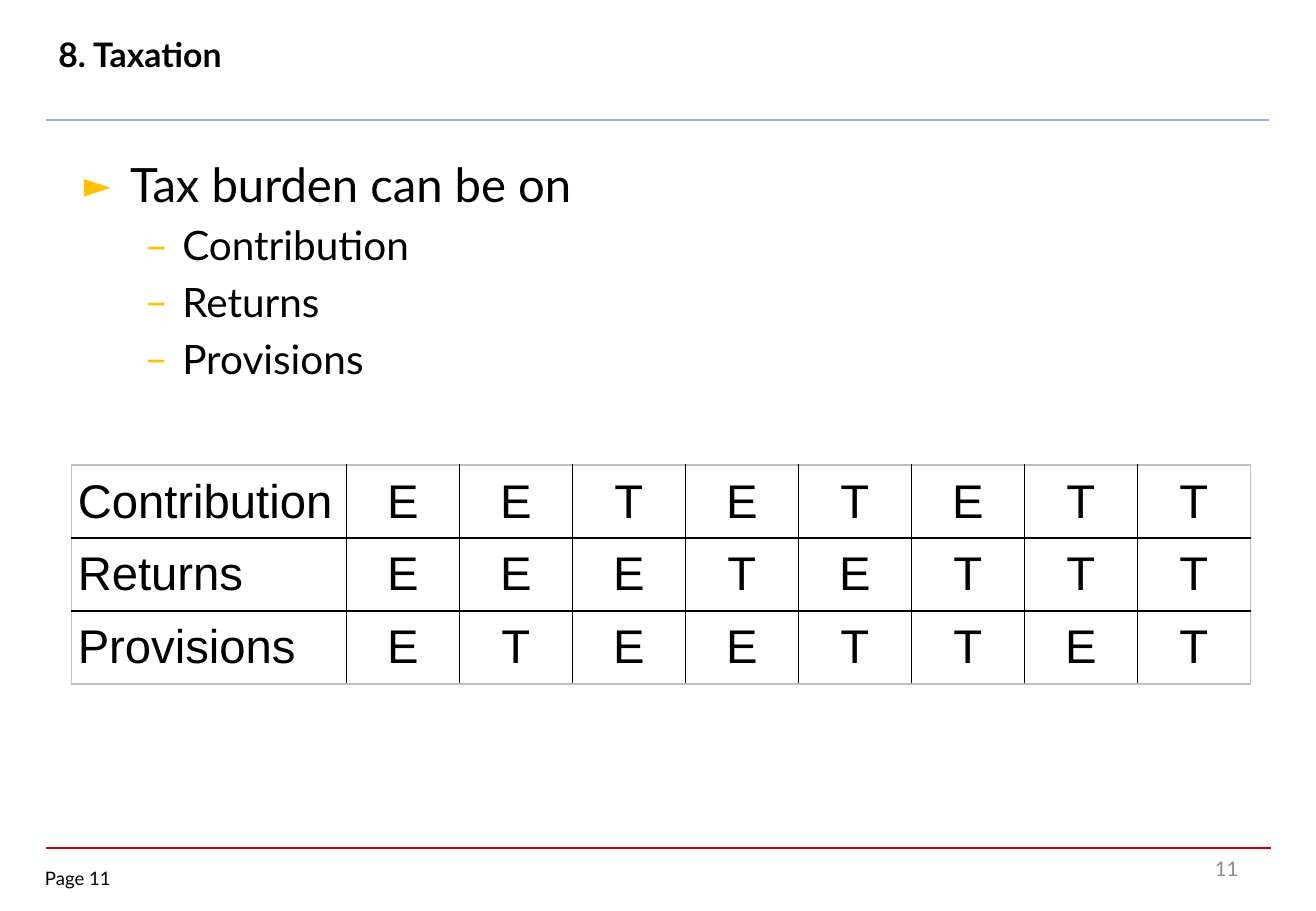
from lxml import etree
from pptx import Presentation
from pptx.dml.color import RGBColor
from pptx.enum.shapes import MSO_CONNECTOR
from pptx.enum.text import MSO_ANCHOR, MSO_AUTO_SIZE, PP_ALIGN
from pptx.oxml import parse_xml
from pptx.oxml.ns import nsdecls, qn
from pptx.util import Inches, Pt

LEFT, CENTER, RIGHT = PP_ALIGN.LEFT, PP_ALIGN.CENTER, PP_ALIGN.RIGHT
MIDDLE, NO_FIT = MSO_ANCHOR.MIDDLE, MSO_AUTO_SIZE.NONE
STRAIGHT = MSO_CONNECTOR.STRAIGHT
BLACK, GREY, GOLD = "000000", "BFBFBF", "FFC000"


def rgb(value):
    return RGBColor.from_string(value)


def style(p, size, color=BLACK, align=LEFT, font="Lato", bold=False):
    p.alignment = align
    for r in p.runs:
        r.font.name, r.font.size, r.font.bold = font, Pt(size), bold
        r.font.color.rgb = rgb(color)


prs = Presentation()
prs.slide_width, prs.slide_height = Inches(10.83), Inches(7.5)
s = prs.slides.add_slide(prs.slide_layouts[1])

# Rules above the footer and below the title
for right, y, color, width in [(10.46, 6.98, "C00000", 1), (10.44, 0.99, "8EB4E3", 1.5)]:
    line = s.shapes.add_connector(STRAIGHT, Inches(0.38), Inches(y), Inches(right), Inches(y))
    line.line.color.rgb = rgb(color)
    line.line.width = Pt(width)
    etree.SubElement(line._element.spPr, qn("a:effectLst"))

# Title
title = s.shapes.title
title.left, title.top, title.width, title.height = map(Inches, (0.38, 0.09, 9.92, 0.71))
tf = title.text_frame
tf.text = "8. Taxation"
tf.auto_size, tf.vertical_anchor = NO_FIT, MIDDLE
style(tf.paragraphs[0], 20, bold=True)

# Tax burden list
body = s.placeholders[1]
body.left, body.top, body.width, body.height = map(Inches, (0.59, 1.23, 9.7, 2.2))
tf = body.text_frame
tf.auto_size = NO_FIT
tf.text = "Tax burden can be on\nContribution\nReturns\nProvisions"
for i, p in enumerate(tf.paragraphs):
    if i == 0:
        margin, hanging, mark, scale, size = 0.38, 0.38, "►", 75, 28
        p.space_before = Pt(0)
    else:
        margin, hanging, mark, scale, size = 0.81, 0.31, "–", 100, 24
        p.level = 1
        p.space_before = Pt(0.2 * size)
    pPr = p._p.get_or_add_pPr()
    pPr.set("marL", str(Inches(margin)))
    pPr.set("indent", str(-Inches(hanging)))
    for xml in (f'<a:buClr {nsdecls("a")}><a:srgbClr val="{GOLD}"/></a:buClr>',
                f'<a:buSzPct {nsdecls("a")} val="{scale * 1000}"/>',
                f'<a:buFont {nsdecls("a")} typeface="Lato"/>',
                f'<a:buChar {nsdecls("a")} char="{mark}"/>'):
        pPr.append(parse_xml(xml))
    style(p, size)

# Table: E and T for each stage
stages = [("Contribution", "EETETETT"), ("Returns", "EEETETTT"), ("Provisions", "ETEETTET")]
n_rows, n_cols = len(stages), 9
table = s.shapes.add_table(n_rows, n_cols, Inches(0.59), Inches(3.83),
                           Inches(9.7), Inches(1.81)).table
table.first_row = table.horz_banding = False
for j, col in enumerate(table.columns):
    col.width = Inches(0.93 if j else 2.26)
for i, (stage, letters) in enumerate(stages):
    table.rows[i].height = Inches(0.6)
    for j, text in enumerate([stage, *letters]):
        cell = table.cell(i, j)
        cell.text = text
        cell.vertical_anchor = MIDDLE
        cell.margin_left = cell.margin_right = Inches(0.05)
        cell.margin_top = cell.margin_bottom = Inches(0.05)
        style(cell.text_frame.paragraphs[0], 28, align=CENTER if j else LEFT, font="Arial")
        # Grey outer edges, black inner lines
        outer = {"L": j == 0, "R": j == n_cols - 1, "T": i == 0, "B": i == n_rows - 1}
        tcPr = cell._tc.get_or_add_tcPr()
        for side, is_outer in outer.items():
            tcPr.append(parse_xml(
                f'<a:ln{side} {nsdecls("a")} w="{Pt(1)}"><a:solidFill>'
                f'<a:srgbClr val="{GREY if is_outer else BLACK}"/></a:solidFill></a:ln{side}>'))
        cell.fill.background()

# Page label
label = s.shapes.add_textbox(Inches(0.37), Inches(7.14), Inches(0.73), Inches(0.22))
tf = label.text_frame
tf.margin_left = tf.margin_right = tf.margin_top = tf.margin_bottom = 0
tf.text = "Page 11"
style(tf.paragraphs[0], 11)

# Slide number
number = s.shapes.add_textbox(Inches(7.76), Inches(6.95), Inches(2.53), Inches(0.4))
tf = number.text_frame
tf.word_wrap, tf.vertical_anchor = True, MIDDLE
tf.text = "11"
style(tf.paragraphs[0], 12, "8C8C8C", RIGHT)

prs.save("out.pptx")
